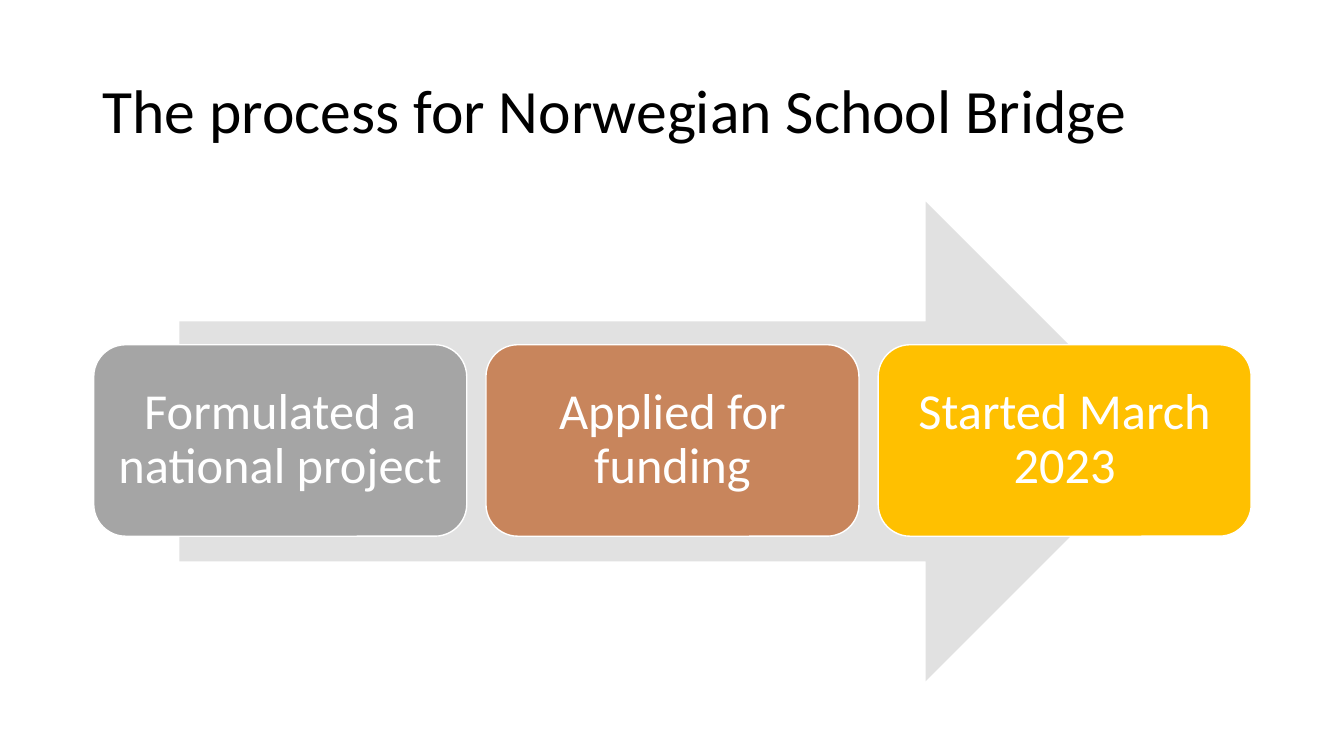
from pptx import Presentation
from pptx.dml.color import RGBColor
from pptx.enum.shapes import MSO_SHAPE
from pptx.enum.text import MSO_ANCHOR, PP_ALIGN
from pptx.util import Inches, Pt

BLACK = RGBColor(0x00, 0x00, 0x00)
WHITE = RGBColor(0xFF, 0xFF, 0xFF)
PALE = RGBColor(0xE1, 0xE1, 0xE1)
GRAY = RGBColor(0xA5, 0xA5, 0xA5)
COPPER = RGBColor(0xC8, 0x85, 0x5C)
GOLD = RGBColor(0xFF, 0xC0, 0x00)

STEPS = [
    ("Formulated a national project", GRAY),
    ("Applied for funding", COPPER),
    ("Started March 2023", GOLD),
]


class Deck:
    """Holds the text style and the current slide."""

    font = "Calibri"
    spacing = 0.9

    def __init__(self, slide):
        self.shapes = slide.shapes

    def label(self, shape, text, size, color, align):
        frame = shape.text_frame
        frame.word_wrap = True
        frame.vertical_anchor = MSO_ANCHOR.MIDDLE
        para = frame.paragraphs[0]
        para.text = text
        para.alignment = align
        para.line_spacing = self.spacing
        para.font.name = self.font
        para.font.size = Pt(size)
        para.font.color.rgb = color
        return frame

    def title(self, text, *box):
        area = self.shapes.add_textbox(*map(Inches, box))
        self.label(area, text, 44, BLACK, PP_ALIGN.LEFT)

    def block(self, kind, fill, *box):
        shape = self.shapes.add_shape(kind, *map(Inches, box))
        shape.shadow.inherit = False
        shape.fill.solid()
        shape.fill.fore_color.rgb = fill
        shape.line.fill.background()
        return shape

    def step(self, text, fill, *box):
        card = self.block(MSO_SHAPE.ROUNDED_RECTANGLE, fill, *box)
        card.line.color.rgb = WHITE
        card.line.width = Pt(1)
        frame = self.label(card, text, 36, WHITE, PP_ALIGN.CENTER)
        frame.margin_left = frame.margin_right = Inches(0.15)


def main():
    prs = Presentation()
    prs.slide_width = Inches(13.33)
    prs.slide_height = Inches(7.5)
    deck = Deck(prs.slides.add_slide(prs.slide_layouts[6]))

    # Title
    deck.title("The process for Norwegian School Bridge", 0.92, 0.4, 11.5, 1.45)

    # Arrow behind the steps
    deck.block(MSO_SHAPE.RIGHT_ARROW, PALE, 1.78, 2, 9.78, 4.76)

    # Steps, evenly spaced
    left, width, gap = 0.93, 3.7, 0.19
    for i, (text, fill) in enumerate(STEPS):
        deck.step(text, fill, left + i * (width + gap), 3.42, width, 1.9)

    prs.save("out.pptx")


if __name__ == "__main__":
    main()
